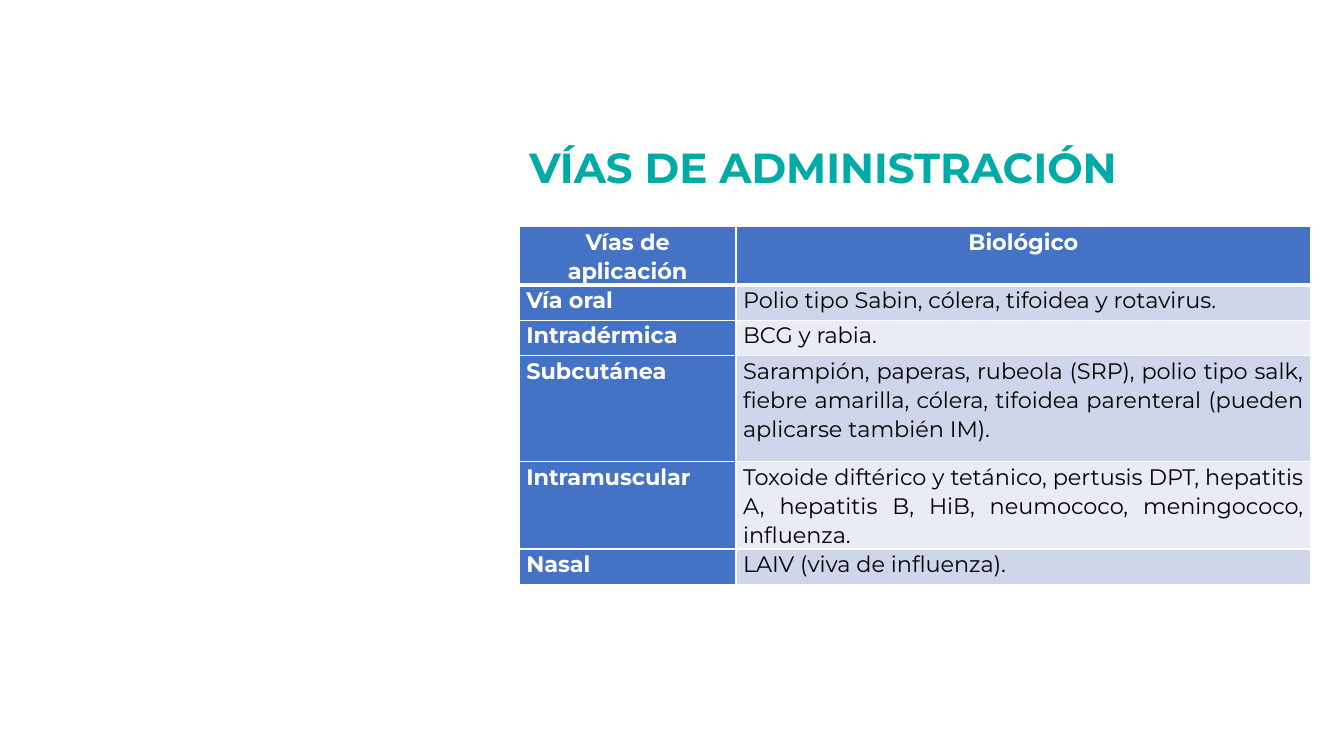
import pptx
import pptx.util
import pptx.dml.color
import pptx.enum.text
import pptx.oxml

PX = 9144  # EMU in one px, 100 px to the inch
FONT = "Montserrat"
ALIGN = pptx.enum.text.PP_ALIGN
TOP = pptx.enum.text.MSO_ANCHOR.TOP
BLUE, WHITE = "4472C4", "FFFFFF"
BANDS = ["CFD5EA", "E9EBF5"]


def color(code):
    return pptx.dml.color.RGBColor.from_string(code)


def write(frame, text, size=16, ink=WHITE, bold=True, align=ALIGN.LEFT, space=1.0):
    frame.word_wrap = True
    par = frame.paragraphs[0]
    par.alignment = align
    par.line_spacing = space
    run = par.add_run()
    run.text = text
    run.font.name = FONT
    run.font.size = pptx.util.Pt(size)
    run.font.bold = bold
    run.font.color.rgb = color(ink)


deck = pptx.Presentation()
deck.slide_width, deck.slide_height = 1333 * PX, 750 * PX
slide = deck.slides.add_slide(deck.slide_layouts[5])

# Title
title = slide.shapes.title
title.left, title.top, title.width, title.height = [n * PX for n in (515, 135, 727, 61)]
title.text_frame.vertical_anchor = TOP
title.text_frame.auto_size = pptx.enum.text.MSO_AUTO_SIZE.NONE
write(title.text_frame, "VÍAS DE ADMINISTRACIÓN", size=30, ink="00AAA7")

# Table of routes
rows = [
    (35, "Vías de aplicación", "Biológico"),
    (35, "Vía oral", "Polio tipo Sabin, cólera, tifoidea y rotavirus."),
    (35, "Intradérmica", "BCG y rabia."),
    (105, "Subcutánea", "Sarampión, paperas, rubeola (SRP), polio tipo salk, fiebre amarilla, "
     "cólera, tifoidea parenteral (pueden aplicarse también IM)."),
    (70, "Intramuscular", "Toxoide diftérico y tetánico, pertusis DPT, hepatitis A, hepatitis B, "
     "HiB, neumococo, meningococo, influenza."),
    (35, "Nasal", "LAIV (viva de influenza)."),
]
high = sum(row[0] for row in rows)
table = slide.shapes.add_table(len(rows), 2, 515 * PX, 225 * PX, 785 * PX, high * PX).table
for col, width in zip(table.columns, (215, 570)):
    col.width = width * PX

for r, (height, *texts) in enumerate(rows):
    table.rows[r].height = height * PX
    for c, text in enumerate(texts):
        cell = table.cell(r, c)
        cell.margin_left = cell.margin_right = 7 * PX
        cell.margin_top = cell.margin_bottom = 0
        cell.vertical_anchor = TOP

        # White borders, thicker under the header
        props = cell._tc.get_or_add_tcPr()
        for side in "LRTB":
            thick = (r, side) in [(0, "B"), (1, "T")]
            width = pptx.util.Pt(3 if thick else 1)
            props.append(pptx.oxml.parse_xml(
                f'<a:ln{side} xmlns:a="http://schemas.openxmlformats.org/drawingml/2006/main" '
                f'w="{width}"><a:solidFill><a:srgbClr val="{WHITE}"/></a:solidFill></a:ln{side}>'))

        # Fill and text
        head = r == 0 or c == 0
        cell.fill.solid()
        cell.fill.fore_color.rgb = color(BLUE if head else BANDS[(r - 1) % 2])
        write(cell.text_frame, text, ink=WHITE if head else "000000", bold=head,
              align=ALIGN.CENTER if r == 0 else ALIGN.JUSTIFY, space=1.07)

deck.save("out.pptx")
